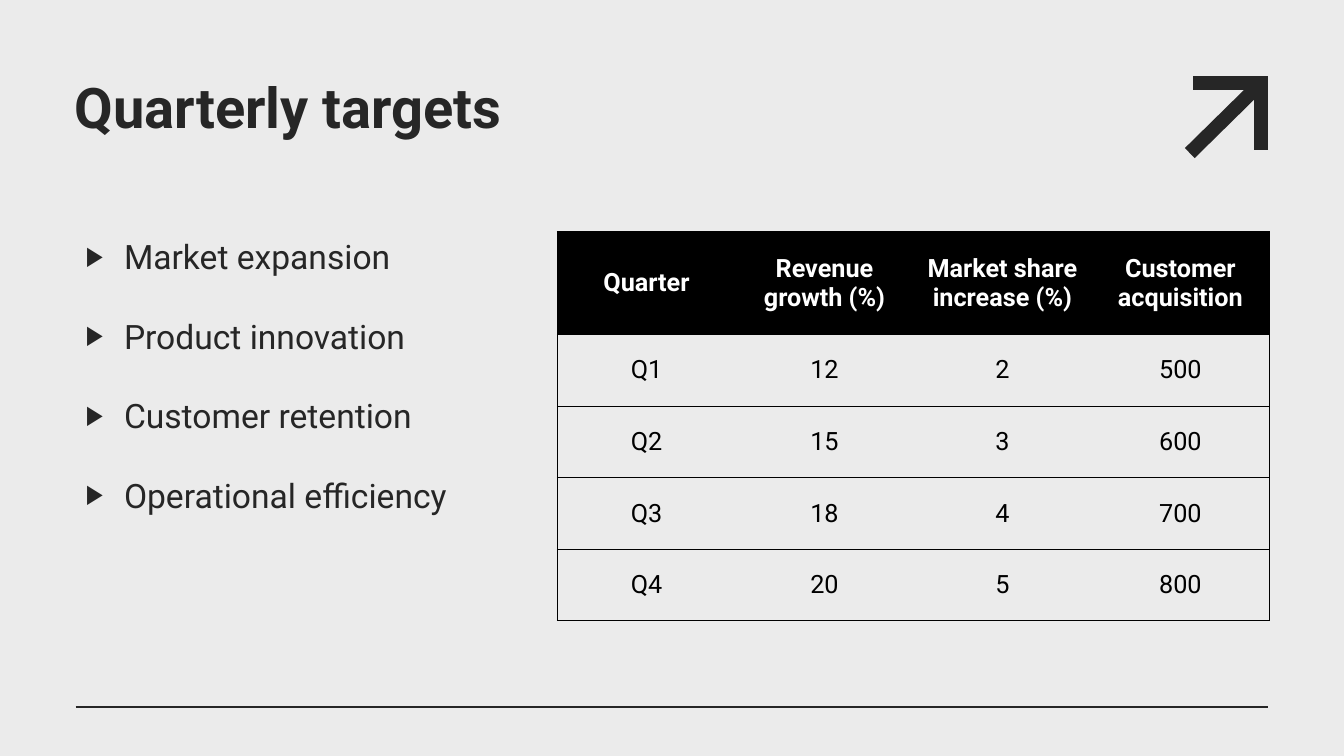
from dataclasses import dataclass

import pptx
import pptx.dml.color
import pptx.enum.shapes
import pptx.enum.text
import pptx.oxml.ns
import pptx.util
from lxml import etree
from pptx.util import Inches


@dataclass(frozen=True)
class Theme:
    font: str = "Roboto"
    background: str = "EBEBEB"
    ink: str = "262626"
    table_line: str = "000000"
    header_text: str = "FFFFFF"
    title_size: int = 40
    body_size: int = 24
    table_size: int = 18


THEME = Theme()
TARGETS = [
    ["Quarter", "Revenue growth (%)", "Market share increase (%)", "Customer acquisition"],
    ["Q1", "12", "2", "500"],
    ["Q2", "15", "3", "600"],
    ["Q3", "18", "4", "700"],
    ["Q4", "20", "5", "800"],
]
PRIORITIES = [
    "Market expansion",
    "Product innovation",
    "Customer retention",
    "Operational efficiency",
]
ARROW_STROKES = [
    (11.9, 0.82, 12.5, 0.82),
    (12.51, 0.82, 12.51, 1.42),
    (11.85, 1.47, 12.44, 0.89),
]


def rgb(color):
    return pptx.dml.color.RGBColor.from_string(color)


def add_element(parent, tag, **attributes):
    element = etree.SubElement(parent, pptx.oxml.ns.qn(tag))
    for name, value in attributes.items():
        element.set(name, value)
    return element


def add_run(paragraph, text, size, color, bold=False):
    run = paragraph.add_run()
    run.text = text
    run.font.name = THEME.font
    run.font.size = pptx.util.Pt(size)
    run.font.bold = bold
    run.font.color.rgb = rgb(color)


def place(shape, left, top, width, height):
    shape.left, shape.top = Inches(left), Inches(top)
    shape.width, shape.height = Inches(width), Inches(height)


def format_frame(frame, left, bottom):
    frame.margin_left, frame.margin_bottom = Inches(left), Inches(bottom)
    frame.margin_top = frame.margin_right = 0
    frame.word_wrap = True
    frame.auto_size = pptx.enum.text.MSO_AUTO_SIZE.NONE
    frame.vertical_anchor = pptx.enum.text.MSO_ANCHOR.TOP


def fill_title(shape, text):
    place(shape, 0.74, 0.76, 11, 1.4)
    format_frame(shape.text_frame, 0, 0.1)
    paragraph = shape.text_frame.paragraphs[0]
    paragraph.alignment = pptx.enum.text.PP_ALIGN.LEFT
    paragraph.line_spacing = pptx.util.Pt(45)
    add_run(paragraph, text, THEME.title_size, THEME.ink, bold=True)


def set_bullet(paragraph):
    properties = paragraph._p.get_or_add_pPr()
    properties.set("marL", str(Inches(0.38)))
    properties.set("indent", str(Inches(-0.38)))
    bullet_color = add_element(properties, "a:buClr")
    add_element(bullet_color, "a:srgbClr", val=THEME.ink)
    add_element(properties, "a:buSzPct", val="80000")
    add_element(properties, "a:buFont", typeface=THEME.font)
    add_element(properties, "a:buChar", char="▶")


def fill_list(shape, items):
    place(shape, 0.75, 2.34, 4.15, 3.82)
    frame = shape.text_frame
    format_frame(frame, 0.1, 0)
    for index, item in enumerate(items):
        paragraph = frame.add_paragraph() if index else frame.paragraphs[0]
        paragraph.space_before = pptx.util.Pt(28)
        set_bullet(paragraph)
        add_run(paragraph, item, THEME.body_size, THEME.ink)


def add_line(slide, left, top, right, bottom, width, cap="flat"):
    connector = slide.shapes.add_connector(
        pptx.enum.shapes.MSO_CONNECTOR.STRAIGHT,
        Inches(left), Inches(top), Inches(right), Inches(bottom),
    )
    connector.line.color.rgb = rgb(THEME.ink)
    connector.line.width = pptx.util.Pt(width)
    connector.line._get_or_add_ln().set("cap", cap)
    add_element(connector._element.spPr, "a:effectLst")


def set_borders(cell, visible_sides):
    properties = cell._tc.get_or_add_tcPr()
    for side in "LRTB":
        border = add_element(properties, f"a:ln{side}", w=str(pptx.util.Pt(1)))
        if side in visible_sides:
            fill = add_element(border, "a:solidFill")
            add_element(fill, "a:srgbClr", val=THEME.table_line)
        else:
            add_element(border, "a:noFill")


def format_cell(cell, text, is_header, visible_sides):
    set_borders(cell, visible_sides)
    if is_header:
        cell.fill.solid()
        cell.fill.fore_color.rgb = rgb(THEME.table_line)
    else:
        cell.fill.background()
    cell.vertical_anchor = pptx.enum.text.MSO_ANCHOR.MIDDLE
    paragraph = cell.text_frame.paragraphs[0]
    paragraph.alignment = pptx.enum.text.PP_ALIGN.CENTER
    color = THEME.header_text if is_header else THEME.table_line
    add_run(paragraph, text, THEME.table_size, color, bold=is_header)


def add_targets_table(slide, rows):
    last_column = len(rows[0]) - 1
    table = slide.shapes.add_table(
        len(rows), len(rows[0]), Inches(5.53), Inches(2.3), Inches(7.06), Inches(3.86)
    ).table
    table.first_row = table.horz_banding = False
    for column in table.columns:
        column.width = Inches(7.06 / len(rows[0]))
    for row_index, values in enumerate(rows):
        table.rows[row_index].height = Inches(0.71 if row_index else 1.02)
        for column_index, value in enumerate(values):
            sides = "TB"
            if column_index == 0:
                sides += "L"
            if column_index == last_column:
                sides += "R"
            format_cell(table.cell(row_index, column_index), value, row_index == 0, sides)


def main():
    presentation = pptx.Presentation()
    presentation.slide_width = Inches(13.33)
    presentation.slide_height = Inches(7.5)
    slide = presentation.slides.add_slide(presentation.slide_layouts[1])
    slide.background.fill.solid()
    slide.background.fill.fore_color.rgb = rgb(THEME.background)
    for stroke in ARROW_STROKES:
        add_line(slide, *stroke, width=10, cap="sq")
    add_line(slide, 0.75, 7.01, 12.58, 7.01, width=1.5)
    fill_title(slide.shapes.title, "Quarterly targets")
    fill_list(slide.placeholders[1], PRIORITIES)
    add_targets_table(slide, TARGETS)
    presentation.save("out.pptx")


if __name__ == "__main__":
    main()
